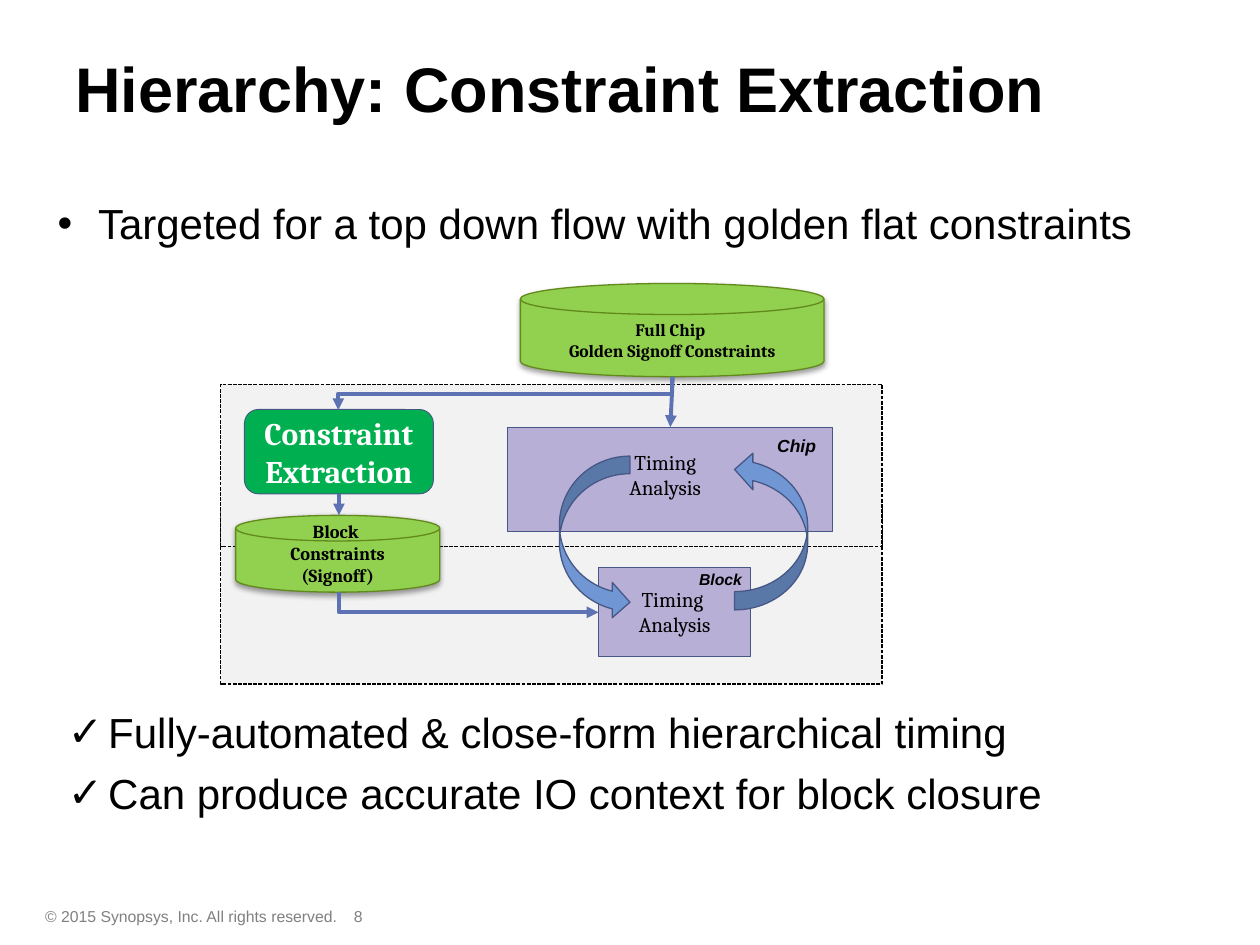
from dataclasses import dataclass
from typing import Optional

from lxml import etree
from pptx import Presentation
from pptx import util as u
from pptx.dml.color import RGBColor
from pptx.enum import dml, shapes, text
from pptx.oxml import ns

PX = u.Inches(1) // 100
KIND = shapes.MSO_SHAPE
CENTER = text.PP_ALIGN.CENTER
LEFT = text.PP_ALIGN.LEFT
MIDDLE = text.MSO_ANCHOR.MIDDLE
TOP = text.MSO_ANCHOR.TOP


@dataclass(frozen=True)
class Theme:
    sans: str = "Arial"
    serif: str = "Cambria"
    black: str = "000000"
    white: str = "FFFFFF"
    grey: str = "808080"
    panel: str = "F2F2F2"
    purple: str = "B8AFD6"
    lime: str = "92D050"
    lime_edge: str = "62891C"
    green: str = "00B050"
    arrow: str = "7097D3"
    edge: str = "475785"
    flow: str = "5C72B2"
    title: float = 36
    body: float = 24
    heading: float = 18
    node: float = 12
    store: float = 10
    block_store: float = 10.5
    tag: float = 10
    small: float = 9


THEME = Theme()


@dataclass(frozen=True)
class Box:
    left: int
    top: int
    width: int
    height: int

    def emu(self) -> tuple[int, ...]:
        return tuple(v * PX for v in (self.left, self.top, self.width, self.height))


@dataclass(frozen=True)
class Words:
    lines: tuple[str, ...]
    size: float
    font: str = THEME.sans
    color: str = THEME.black
    bold: bool = False
    italic: bool = False
    align: text.PP_ALIGN = LEFT
    anchor: text.MSO_ANCHOR = TOP
    insets: tuple[int, int, int, int] = (10, 5, 10, 5)
    wrap: bool = True
    bullet: str = ""


@dataclass(frozen=True)
class Node:
    kind: KIND
    box: Box
    fill: str
    edge: str = THEME.edge
    weight: float = 0.5
    dashed: bool = False
    shadow: bool = False
    rotation: int = 0
    words: Optional[Words] = None


@dataclass(frozen=True)
class Bend:
    preset: str
    box: Box
    rotation: int
    flip: bool = False


def add_bullet(paragraph, mark: str) -> None:
    properties = paragraph._p.get_or_add_pPr()
    properties.set("marL", str(32 * PX))
    properties.set("indent", str(-32 * PX))
    etree.SubElement(properties, ns.qn("a:buFont"), typeface=THEME.sans)
    etree.SubElement(properties, ns.qn("a:buChar"), char=mark)


def write(frame, words: Words) -> None:
    frame.word_wrap = words.wrap
    frame.vertical_anchor = words.anchor
    (frame.margin_left, frame.margin_top,
     frame.margin_right, frame.margin_bottom) = (v * PX for v in words.insets)
    for index, line in enumerate(words.lines):
        paragraph = frame.add_paragraph() if index else frame.paragraphs[0]
        paragraph.text = line
        paragraph.alignment = words.align
        if words.bullet:
            if index:
                paragraph.space_before = u.Pt(6)
            add_bullet(paragraph, words.bullet)
        font = paragraph.font
        font.name, font.size = words.font, u.Pt(words.size)
        font.bold, font.italic = words.bold, words.italic
        font.color.rgb = RGBColor.from_string(words.color)


def add_label(slide, box: Box, words: Words) -> None:
    write(slide.shapes.add_textbox(*box.emu()).text_frame, words)


def add_node(slide, node: Node):
    shape = slide.shapes.add_shape(node.kind, *node.box.emu())
    shape.rotation = node.rotation
    shape.fill.solid()
    shape.fill.fore_color.rgb = RGBColor.from_string(node.fill)
    shape.line.color.rgb = RGBColor.from_string(node.edge)
    shape.line.width = u.Pt(node.weight)
    if node.dashed:
        shape.line.dash_style = dml.MSO_LINE.SQUARE_DOT
    shape.shadow.inherit = False
    if node.shadow:
        effects = shape.element.spPr.find(ns.qn("a:effectLst"))
        outer = etree.SubElement(effects, ns.qn("a:outerShdw"), blurRad="40000",
                                 dist="20000", dir="5400000", rotWithShape="0")
        color = etree.SubElement(outer, ns.qn("a:srgbClr"), val=THEME.black)
        etree.SubElement(color, ns.qn("a:alpha"), val="38000")
    if node.words:
        write(shape.text_frame, node.words)
    return shape


def add_flow(slide, kind, start: tuple[int, int], end: tuple[int, int]):
    connector = slide.shapes.add_connector(kind, *(v * PX for v in start + end))
    connector.line.color.rgb = RGBColor.from_string(THEME.flow)
    connector.line.width = u.Pt(2.25)
    properties = connector.element.spPr
    etree.SubElement(properties.find(ns.qn("a:ln")), ns.qn("a:tailEnd"), type="triangle")
    etree.SubElement(properties, ns.qn("a:effectLst"))
    return connector


def add_bend(slide, bend: Bend) -> None:
    box = bend.box
    connector = add_flow(slide, shapes.MSO_CONNECTOR.ELBOW, (box.left, box.top),
                         (box.left + box.width, box.top + box.height))
    properties = connector.element.spPr
    properties.find(ns.qn("a:prstGeom")).set("prst", bend.preset)
    transform = properties.find(ns.qn("a:xfrm"))
    transform.set("rot", str(bend.rotation * 60000))
    if bend.flip:
        transform.set("flipH", "1")


def serif(*lines: str, size: float = THEME.node, color: str = THEME.black,
          bold: bool = False, insets: tuple[int, int, int, int] = (0, 0, 0, 0)) -> Words:
    return Words(lines, size, THEME.serif, color, bold, align=CENTER, anchor=MIDDLE, insets=insets)


def store(box: Box, words: Words) -> Node:
    return Node(KIND.FLOWCHART_MAGNETIC_DISK, box, THEME.lime, THEME.lime_edge, 0.75,
                shadow=True, words=words)


def build() -> None:
    presentation = Presentation()
    presentation.slide_width, presentation.slide_height = 1000 * PX, 750 * PX
    slide = presentation.slides.add_slide(presentation.slide_layouts[6])

    for left, width, line in ((26, 308, "© 2015 Synopsys, Inc. All rights reserved."), (271, 70, "8")):
        add_label(slide, Box(left, 715, width, 25), Words((line,), THEME.small, color=THEME.grey))
    add_label(slide, Box(50, 7, 950, 125),
              Words(("Hierarchy: Constraint Extraction",), THEME.title, bold=True, anchor=MIDDLE))

    for top, height in ((403, 140), (305, 129)):
        add_node(slide, Node(KIND.RECTANGLE, Box(175, top, 525, height), THEME.panel,
                             THEME.black, 0.75, dashed=True))
    chip = add_node(slide, Node(KIND.RECTANGLE, Box(403, 339, 258, 83), THEME.purple))
    add_label(slide, Box(458, 357, 140, 40), serif("Timing", "Analysis"))
    add_node(slide, Node(KIND.RECTANGLE, Box(475, 450, 121, 71), THEME.purple,
                         words=serif("Timing ", "Analysis")))
    add_node(slide, store(Box(413, 225, 241, 74), serif(
        "Full Chip ", "Golden Signoff Constraints", size=THEME.store, bold=True, insets=(0, 4, 0, 0))))
    extraction = add_node(slide, Node(
        KIND.ROUNDED_RECTANGLE, Box(194, 325, 150, 67), THEME.green,
        words=serif("Constraint", "Extraction", size=THEME.heading, color=THEME.white, bold=True)))
    add_node(slide, store(Box(187, 409, 162, 61), serif(
        "Block ", "Constraints", "(Signoff)", size=THEME.block_store, bold=True, insets=(10, 0, 10, 11))))

    straight = shapes.MSO_CONNECTOR.STRAIGHT
    add_flow(slide, straight, (534, 299), (533, 339)).end_connect(chip, 0)
    add_bend(slide, Bend("bentConnector3", Box(388, 180, 26, 265), 90))
    add_flow(slide, straight, (269, 392), (269, 409)).begin_connect(extraction, 2)
    add_bend(slide, Bend("bentConnector2", Box(364, 375, 16, 206), 270, flip=True))

    for box, line, size, wrap in ((Box(545, 447, 67, 25), "Block", THEME.small, True),
                                  (Box(607, 340, 51, 27), "Chip", THEME.tag, False)):
        add_label(slide, box, Words((line,), size, bold=True, italic=True, wrap=wrap))
    for box, rotation in ((Box(444, 362, 56, 130), 0), (Box(583, 358, 58, 126), 180)):
        add_node(slide, Node(KIND.CURVED_RIGHT_ARROW, box, THEME.arrow, weight=0.75, rotation=rotation))

    add_label(slide, Box(44, 556, 848, 106), Words(
        ("Fully-automated & close-form hierarchical timing",
         "Can produce accurate IO context for block closure"), THEME.body, bullet="✓"))
    add_label(slide, Box(36, 152, 900, 81), Words(
        ("Targeted for a top down flow with golden flat constraints",), THEME.body, bullet="•"))
    presentation.save("out.pptx")


if __name__ == "__main__":
    build()
